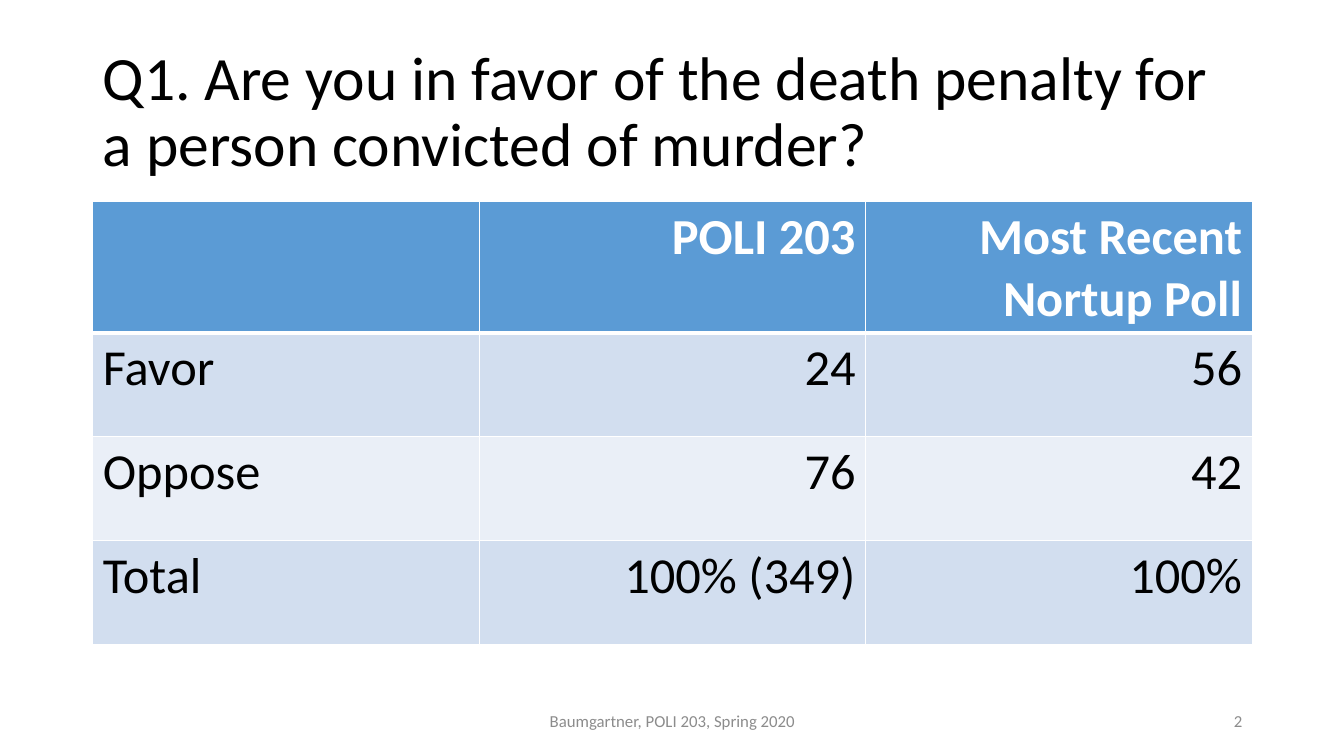
from pptx import Presentation
from pptx.dml.color import RGBColor
from pptx.enum.text import MSO_ANCHOR, PP_ALIGN
from pptx.oxml import parse_xml
from pptx.oxml.ns import nsdecls
from pptx.util import Inches, Pt

FONT = "Calibri"
BLACK, WHITE, GREY = "000000", "FFFFFF", "8C8C8C"
HEADER_FILL = "5B9BD5"
BAND_FILLS = ["EAEFF7", "D2DEEF"]

TITLE = "Q1. Are you in favor of the death penalty for a person convicted of murder?"
FOOTER = "Baumgartner, POLI 203, Spring 2020"
PAGE_NUMBER = "2"
POLL = [
    ("", "POLI 203", "Most Recent Nortup Poll"),
    ("Favor", "24", "56"),
    ("Oppose", "76", "42"),
    ("Total", "100% (349)", "100%"),
]

LEFT, WIDTH = 0.92, 11.5
TABLE_TOP, ROW_HEIGHT = 2, 1.03
FOOTER_TOP, FOOTER_HEIGHT = 6.95, 0.4


def color(value):
    return RGBColor.from_string(value)


def style(para, size, ink, align, bold=False):
    para.alignment = align
    para.font.name = FONT
    para.font.size = Pt(size)
    para.font.bold = bold
    para.font.color.rgb = color(ink)


def add_text(page, text, left, top, width, height, size, ink, align):
    box = page.shapes.add_textbox(Inches(left), Inches(top), Inches(width), Inches(height))
    frame = box.text_frame
    frame.word_wrap = True
    frame.vertical_anchor = MSO_ANCHOR.MIDDLE
    para = frame.paragraphs[0]
    para.text = text
    style(para, size, ink, align)
    return para


def add_border(cell, side, points):
    cell._tc.get_or_add_tcPr().append(parse_xml(
        f'<a:ln{side} {nsdecls("a")} w="{Pt(points)}"><a:solidFill>'
        f'<a:srgbClr val="{WHITE}"/></a:solidFill></a:ln{side}>'))


def add_poll_table(page):
    rows, columns = len(POLL), len(POLL[0])
    table = page.shapes.add_table(
        rows, columns, Inches(LEFT), Inches(TABLE_TOP),
        Inches(WIDTH), Inches(ROW_HEIGHT * rows)).table
    for row, values in enumerate(POLL):
        header = row == 0
        borders = {"L": 1, "R": 1, "T": 3 if row == 1 else 1, "B": 3 if header else 1}
        for column, value in enumerate(values):
            cell = table.cell(row, column)
            for side, points in borders.items():
                add_border(cell, side, points)
            cell.fill.solid()
            cell.fill.fore_color.rgb = color(HEADER_FILL if header else BAND_FILLS[row % 2])
            para = cell.text_frame.paragraphs[0]
            para.text = value
            style(para, 36, WHITE if header else BLACK,
                  PP_ALIGN.RIGHT if column else PP_ALIGN.LEFT, header)


def main():
    deck = Presentation()
    deck.slide_width, deck.slide_height = Inches(13.33), Inches(7.5)
    page = deck.slides.add_slide(deck.slide_layouts[6])
    title = add_text(page, TITLE, LEFT, 0.4, WIDTH, 1.45, 44, BLACK, PP_ALIGN.LEFT)
    title.line_spacing = 0.9
    add_poll_table(page)
    add_text(page, FOOTER, 4.42, FOOTER_TOP, 4.5, FOOTER_HEIGHT, 12, GREY, PP_ALIGN.CENTER)
    add_text(page, PAGE_NUMBER, 9.42, FOOTER_TOP, 3, FOOTER_HEIGHT, 12, GREY, PP_ALIGN.RIGHT)
    deck.save("out.pptx")


if __name__ == "__main__":
    main()
